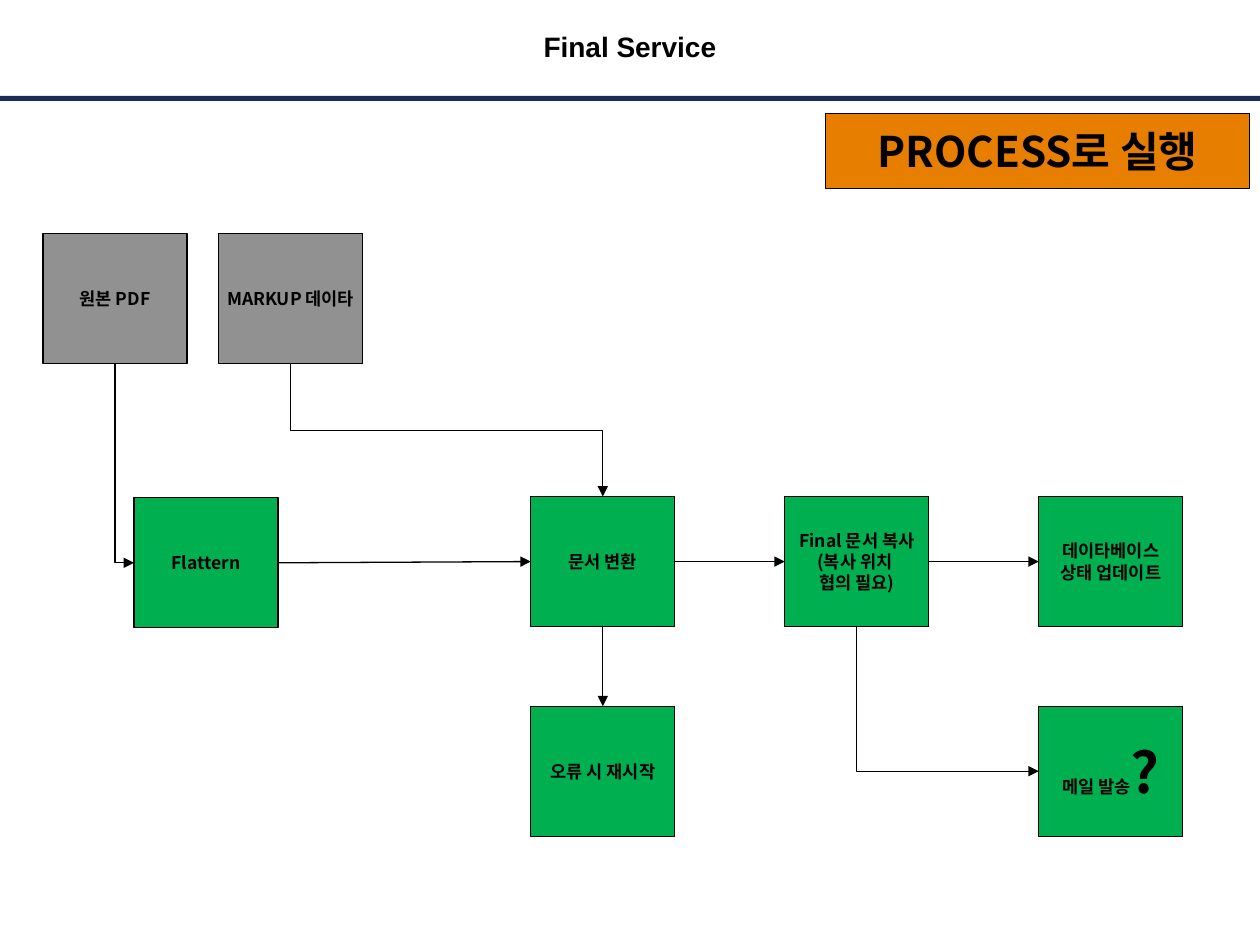
import dataclasses

import pptx
import pptx.dml.color
import pptx.enum.shapes
import pptx.enum.text
import pptx.oxml
import pptx.oxml.ns
import pptx.util

Inches = pptx.util.Inches
Pt = pptx.util.Pt
qn = pptx.oxml.ns.qn

COLORS = {"navy": "1B2E5A", "green": "00B050", "gray": "919191", "orange": "E87E00", "black": "000000"}
KOREAN = "Noto Sans CJK KR"
BOX_W, BOX_H = 1.14, 1.03
CONVERT_X, STEP_X = 4.2, 2.01
SOURCE_Y, MAIN_Y, LOWER_Y = 1.85, 3.93, 5.59
TOP, LEFT, BOTTOM, RIGHT = range(4)


@dataclasses.dataclass(frozen=True)
class Run:
    text: str
    size: float = 10


@dataclasses.dataclass(frozen=True)
class Box:
    name: str
    x: float
    y: float
    runs: tuple[Run, ...]
    color: str = "green"
    w: float = BOX_W
    h: float = BOX_H


@dataclasses.dataclass(frozen=True)
class Arrow:
    start: str
    start_site: int
    end: str
    end_site: int
    preset: str = "line"


BOXES = [
    Box("convert", CONVERT_X, MAIN_Y, (Run("문서 변환"),)),
    Box("copy", CONVERT_X + STEP_X, MAIN_Y, (Run("Final 문서 복사\n(복사 위치 \n협의 필요)"),)),
    Box("database", CONVERT_X + 2 * STEP_X, MAIN_Y, (Run("데이타베이스\n상태 업데이트"),)),
    Box("pdf", 0.34, SOURCE_Y, (Run("원본 PDF"),), "gray"),
    Box("markup", 1.73, SOURCE_Y, (Run("MARKUP 데이타"),), "gray"),
    Box("restart", CONVERT_X, LOWER_Y, (Run("오류 시 재시작"),)),
    Box("mail", CONVERT_X + 2 * STEP_X, LOWER_Y, (Run("메일 발송"), Run("?", 32))),
    Box("flatten", 1.06, 3.94, (Run("Flattern"),)),
    Box("process", 6.53, 0.9, (Run("PROCESS로 실행", 24),), "orange", 3.36, 0.59),
]

ARROWS = [
    Arrow("markup", BOTTOM, "convert", TOP, "bentConnector3"),
    Arrow("pdf", BOTTOM, "flatten", LEFT, "bentConnector2"),
    Arrow("convert", RIGHT, "copy", LEFT),
    Arrow("copy", RIGHT, "database", LEFT),
    Arrow("convert", BOTTOM, "restart", TOP),
    Arrow("flatten", RIGHT, "convert", LEFT),
    Arrow("copy", BOTTOM, "mail", LEFT, "bentConnector2"),
]


def rgb(name: str) -> pptx.dml.color.RGBColor:
    return pptx.dml.color.RGBColor.from_string(COLORS[name])


def add_text(tf, runs: tuple[Run, ...], font: str, wrap: bool) -> None:
    tf.word_wrap = wrap
    tf.vertical_anchor = pptx.enum.text.MSO_ANCHOR.MIDDLE
    p = tf.paragraphs[0]
    p.alignment = pptx.enum.text.PP_ALIGN.CENTER
    for run in runs:
        for i, line in enumerate(run.text.split("\n")):
            if i:
                p.add_line_break()
            r = p.add_run()
            r.text = line
            r.font.name = font
            r.font.size = Pt(run.size)
            r.font.bold = True
            r.font.color.rgb = rgb("black")
            ea = pptx.oxml.parse_xml(f'<a:ea {pptx.oxml.ns.nsdecls("a")} typeface="{font}"/>')
            r.font._element.find(qn("a:latin")).addnext(ea)


def add_rect(s, x: float, y: float, w: float, h: float, color: str):
    sp = s.shapes.add_shape(
        pptx.enum.shapes.MSO_SHAPE.RECTANGLE, Inches(x), Inches(y), Inches(w), Inches(h)
    )
    sp.shadow.inherit = False
    sp.fill.solid()
    sp.fill.fore_color.rgb = rgb(color)
    sp.line.fill.background()
    return sp


def add_box(s, box: Box):
    sp = add_rect(s, box.x, box.y, box.w, box.h, box.color)
    sp.line.color.rgb = rgb("black")
    sp.line.width = Pt(0.75)
    add_text(sp.text_frame, box.runs, KOREAN, False)
    return sp


def add_arrow(s, arrow: Arrow, shapes: dict) -> None:
    c = s.shapes.add_connector(pptx.enum.shapes.MSO_CONNECTOR.STRAIGHT, 0, 0, 0, 0)
    c.begin_connect(shapes[arrow.start], arrow.start_site)
    c.end_connect(shapes[arrow.end], arrow.end_site)
    c.line.color.rgb = rgb("black")
    c.line.width = Pt(0.75)
    sp_pr = c._element.spPr
    if arrow.preset != "line":
        mid_x, mid_y = c.left + c.width // 2, c.top + c.height // 2
        w, h = c.height, c.width
        c.left, c.top, c.width, c.height = mid_x - w // 2, mid_y - h // 2, w, h
        xfrm = sp_pr.find(qn("a:xfrm"))
        xfrm.set("rot", "16200000")
        xfrm.set("flipH", "1")
        sp_pr.find(qn("a:prstGeom")).set("prst", arrow.preset)
    ns = pptx.oxml.ns.nsdecls("a")
    sp_pr.find(qn("a:ln")).append(pptx.oxml.parse_xml(f'<a:tailEnd {ns} type="triangle"/>'))
    sp_pr.append(pptx.oxml.parse_xml(f"<a:effectLst {ns}/>"))


def main() -> None:
    """Build the Final Service process flow slide."""
    prs = pptx.Presentation()
    prs.slide_width, prs.slide_height = Inches(9.97), Inches(7.48)
    s = prs.slides.add_slide(prs.slide_layouts[6])
    add_rect(s, 0, 0.76, 9.97, 0.04, "navy")
    title = s.shapes.add_textbox(0, Inches(0.13), Inches(9.97), Inches(0.47))
    add_text(title.text_frame, (Run("Final Service", 16),), "Arial", True)
    shapes = {box.name: add_box(s, box) for box in BOXES}
    for arrow in ARROWS:
        add_arrow(s, arrow, shapes)
    prs.save("out.pptx")


if __name__ == "__main__":
    main()
